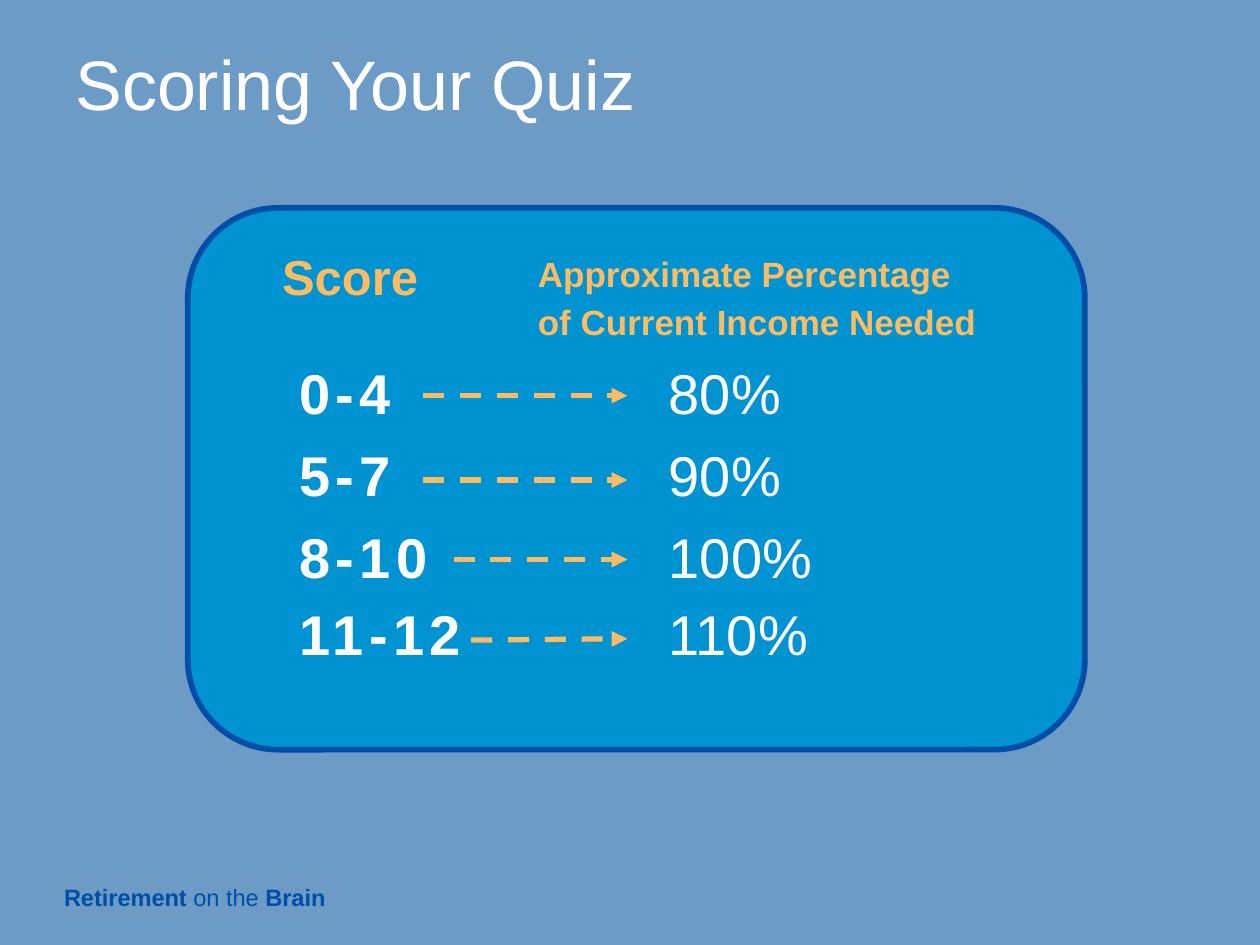
from lxml.etree import SubElement
from pptx import Presentation
from pptx.dml.color import RGBColor
from pptx.enum.dml import MSO_LINE
from pptx.enum.shapes import MSO_CONNECTOR, MSO_SHAPE
from pptx.enum.text import MSO_ANCHOR
from pptx.oxml.ns import qn
from pptx.util import Inches, Pt

WIDE, HIGH = Inches(10), Inches(7.5)
COLS, ROWS = 100, 75
BACK = RGBColor(0x6C, 0x9B, 0xC6)
NAVY = RGBColor(0x00, 0x4E, 0xA8)
BLUE = RGBColor(0x00, 0x93, 0xD1)
GOLD = RGBColor(0xFD, 0xBB, 0x63)
WHITE = RGBColor(0xFF, 0xFF, 0xFF)

TITLE = {"size": Pt(40), "color": WHITE}
HEAD = {"size": Pt(28), "color": GOLD, "bold": True}
NOTE = {"size": Pt(20), "color": GOLD, "bold": True}
SCORE = {"size": Pt(32), "color": WHITE, "bold": True}
SHARE = {"size": Pt(32), "color": WHITE}
FOOT = {"size": Pt(13.5), "color": NAVY}
STRONG = FOOT | {"bold": True}

BANDS = [
    ("0-4", "80%", 28, 33.6, 31.4, 31.4),
    ("5-7", "90%", 34.5, 33.6, 38.1, 38.1),
    ("8-10", "100%", 41, 36, 44.4, 44.4),
    ("11-12", "110%", 47.1, 37.4, 50.8, 50.7),
]


def place(*cells):
    """Turn column and row pairs into slide lengths."""
    units = (WIDE / COLS, HIGH / ROWS)
    return [round(cell * units[i % 2]) for i, cell in enumerate(cells)]


def style(font, form):
    """Set font attributes from a dict."""
    font.name = "Arial"
    for key, value in form.items():
        if key == "color":
            font.color.rgb = value
        else:
            setattr(font, key, value)


def write(slide, cells, lines, lead=1.0, wrap=False, track=0):
    """Add a text box whose lines are lists of (text, format) runs."""
    frame = slide.shapes.add_textbox(*place(*cells)).text_frame
    frame.word_wrap = wrap
    for i, runs in enumerate(lines):
        para = frame.paragraphs[0] if i == 0 else frame.add_paragraph()
        para.line_spacing = lead
        for text, form in runs:
            run = para.add_run()
            run.text = text
            style(run.font, form)
            if track:
                run.font._element.set("spc", str(track * 100))
    return frame


def panel(slide, cells):
    """Add the rounded panel behind the scores."""
    shape = slide.shapes.add_shape(MSO_SHAPE.ROUNDED_RECTANGLE, *place(*cells))
    shape.shadow.inherit = False
    shape.fill.solid()
    shape.fill.fore_color.rgb = BLUE
    shape.line.color.rgb = NAVY
    shape.line.width = Pt(3.25)


def arrow(slide, ends):
    """Add a dashed arrow from score to share."""
    link = slide.shapes.add_connector(MSO_CONNECTOR.STRAIGHT, *place(*ends))
    link.line.color.rgb = GOLD
    for key, value in {"width": Pt(3), "dash_style": MSO_LINE.DASH}.items():
        setattr(link.line, key, value)
    props = link._element.spPr
    SubElement(props.find(qn("a:ln")), qn("a:tailEnd"), type="triangle")
    SubElement(props, qn("a:effectLst"))


def main():
    """Build and save the quiz scoring slide."""
    deck = Presentation()
    deck.slide_width, deck.slide_height = WIDE, HIGH
    slide = deck.slides.add_slide(deck.slide_layouts[6])
    slide.background.fill.solid()
    slide.background.fill.fore_color.rgb = BACK

    brand = [("Retirement", STRONG), (" on the ", FOOT), ("Brain", STRONG)]
    write(slide, (4.1, 69.8, 32.9, 3.8), [brand], 0.9, True)
    title = write(slide, (5, 3.1, 90.2, 7.8),
                  [[("Scoring Your Quiz", TITLE)]], 0.9, True)
    title.vertical_anchor = MSO_ANCHOR.MIDDLE

    panel(slide, (14.9, 16.5, 71.2, 43))
    write(slide, (21.4, 19.1, 12.9, 5.7), [[("Score", HEAD)]])
    write(slide, (41.7, 19.1, 37.1, 8.4),
          [[("Approximate Percentage", NOTE)],
           [("of Current Income Needed", NOTE)]], 1.14)

    for score, share, top, left, start, end in BANDS:
        write(slide, (22.8, top, 15.3, 9.4), [[(score, SCORE)]], track=3)
        write(slide, (52.1, top, 13.5, 9.4), [[(share, SHARE)]])
        arrow(slide, (left, start, 49.8, end))

    deck.save("out.pptx")


if __name__ == "__main__":
    main()
